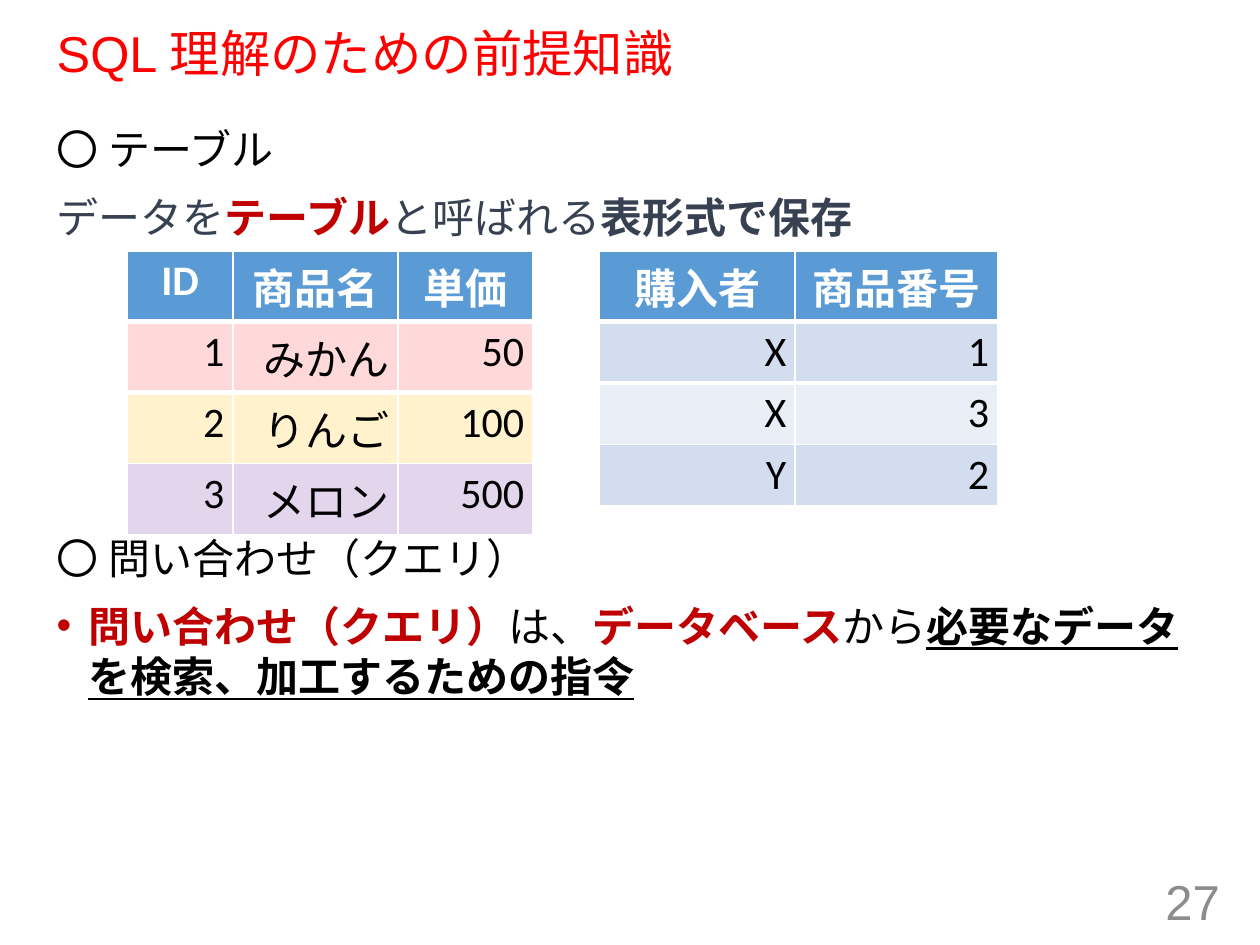
from lxml import etree
from pptx import Presentation
from pptx.dml.color import RGBColor
from pptx.enum.text import MSO_ANCHOR, MSO_AUTO_SIZE, PP_ALIGN
from pptx.oxml.ns import qn
from pptx.util import Inches, Pt

LEFT, CENTER, RIGHT = PP_ALIGN.LEFT, PP_ALIGN.CENTER, PP_ALIGN.RIGHT
MIDDLE, TOP = MSO_ANCHOR.MIDDLE, MSO_ANCHOR.TOP
NO_AUTOFIT = MSO_AUTO_SIZE.NONE
TITLE_AND_CONTENT, TABLE_GAP = 1, 166

COLORS = {
    "title": "FF0000", "text": "000000", "slate": "374151", "key": "C00000",
    "number": "8C8C8C", "header": "5B9BD5", "white": "FFFFFF",
    "red": "FF0000", "yellow": "FFC000", "purple": "7030A0",
    "band_dark": "D2DEEF", "band_light": "EAEFF7",
}

PARAGRAPHS = [
    ("Arial", 10, False, [("〇 テーブル", "text", "")]),
    ("Roboto", 10, False, [
        ("データを", "slate", ""), ("テーブル", "key", "b"),
        ("と呼ばれる", "slate", ""), ("表形式で保存", "slate", "b")]),
    ("Arial", TABLE_GAP, False, [("〇 問い合わせ（クエリ）", "text", "")]),
    ("Arial", 10, True, [
        ("問い合わせ（クエリ）", "key", "b"), ("は、", "text", ""),
        ("データベース", "key", "b"), ("から", "text", ""),
        ("必要なデータを検索、加工するための指令", "text", "bu")]),
]

PRODUCTS = [["ID", "商品名", "単価"], ["1", "みかん", "50"],
            ["2", "りんご", "100"], ["3", "メロン", "500"]]
PURCHASES = [["購入者", "商品番号"], ["X", "1"], ["X", "3"], ["Y", "2"]]


def rgb(name):
    return RGBColor.from_string(COLORS[name])


def set_font(font, name, size, color, bold=False):
    font.name = name
    font.size = Pt(size)
    font.bold = bold
    font.color.rgb = rgb(color)


def place(shape, left, top, width, height):
    shape.left, shape.top = Inches(left), Inches(top)
    shape.width, shape.height = Inches(width), Inches(height)


def add_line(shape, text, size, color, alignment):
    frame = shape.text_frame
    frame.auto_size = NO_AUTOFIT
    frame.word_wrap = True
    frame.vertical_anchor = MIDDLE
    paragraph = frame.paragraphs[0]
    paragraph.text = text
    paragraph.alignment = alignment
    set_font(paragraph.font, "Arial", size, color)
    return paragraph


def set_bullet(paragraph, bulleted):
    properties = paragraph._p.get_or_add_pPr()
    indent = Inches(0.25) if bulleted else 0
    properties.set("marL", str(indent))
    properties.set("indent", str(-indent))
    bullet = etree.Element(qn("a:buChar" if bulleted else "a:buNone"))
    if bulleted:
        bullet.set("char", "•")
    default_font = properties.find(qn("a:defRPr"))
    default_font.addprevious(bullet)


def fill_body(shape):
    frame = shape.text_frame
    frame.auto_size = NO_AUTOFIT
    frame.vertical_anchor = TOP
    for index, (font_name, gap, bulleted, runs) in enumerate(PARAGRAPHS):
        paragraph = frame.add_paragraph() if index else frame.paragraphs[0]
        paragraph.alignment = LEFT
        paragraph.space_before = Pt(gap)
        paragraph.font.name = font_name
        paragraph.font.size = Pt(24)
        set_bullet(paragraph, bulleted)
        for text, color, style in runs:
            run = paragraph.add_run()
            run.text = text
            run.font.color.rgb = rgb(color)
            run.font.bold = "b" in style
            run.font.underline = "u" in style


def fill_cell(cell, color, opacity):
    cell.fill.solid()
    cell.fill.fore_color.rgb = rgb(color)
    if opacity < 100:
        color_element = cell._tc.tcPr.find(".//" + qn("a:srgbClr"))
        alpha = etree.SubElement(color_element, qn("a:alpha"))
        alpha.set("val", str(opacity * 1000))


def add_border(cell, side, width):
    border = etree.Element(qn("a:" + side), w=str(Pt(width)))
    fill = etree.SubElement(border, qn("a:solidFill"))
    etree.SubElement(fill, qn("a:srgbClr"), val=COLORS["white"])
    cell._tc.tcPr.insert(0, border)


def add_data_table(slide, left, rows, widths, row_height, row_fills):
    shape = slide.shapes.add_table(
        len(rows), len(widths), Inches(left), Inches(1.99),
        Inches(sum(widths)), Inches(row_height * len(rows)))
    table = shape.table
    for column, width in zip(table.columns, widths):
        column.width = Inches(width)
    fills = [("header", 100)] + row_fills
    for row_index, (values, fill) in enumerate(zip(rows, fills)):
        is_header = row_index == 0
        for column_index, value in enumerate(values):
            cell = table.cell(row_index, column_index)
            cell.margin_left = cell.margin_right = Inches(0.07)
            cell.margin_top = cell.margin_bottom = Inches(0.04)
            fill_cell(cell, *fill)
            if row_index < 2:
                add_border(cell, "lnB" if is_header else "lnT", 3)
            paragraph = cell.text_frame.paragraphs[0]
            paragraph.text = value
            paragraph.alignment = CENTER if is_header else RIGHT
            set_font(paragraph.font, "Calibri", 24,
                     "white" if is_header else "text", is_header)


def main():
    presentation = Presentation()
    presentation.slide_width, presentation.slide_height = Inches(10), Inches(7.5)
    layout = presentation.slide_layouts[TITLE_AND_CONTENT]
    slide = presentation.slides.add_slide(layout)

    title, body = slide.placeholders
    place(title, 0.35, 0.19, 9.25, 0.51)
    heading = add_line(title, "SQL 理解のための前提知識", 28.8, "title", LEFT)
    heading.line_spacing = 0.9
    place(body, 0.35, 0.93, 9.31, 6.43)
    fill_body(body)

    number = slide.shapes.add_textbox(
        Inches(7.53), Inches(6.95), Inches(2.25), Inches(0.4))
    add_line(number, "27", 28, "number", RIGHT)

    add_data_table(slide, 1.01, PRODUCTS, [0.84, 1.31, 1.07], 0.42,
                   [("red", 15), ("yellow", 20), ("purple", 20)])
    add_data_table(slide, 4.76, PURCHASES, [1.55, 1.61], 0.38,
                   [("band_dark", 100), ("band_light", 100), ("band_dark", 100)])
    presentation.save("out.pptx")


if __name__ == "__main__":
    main()
